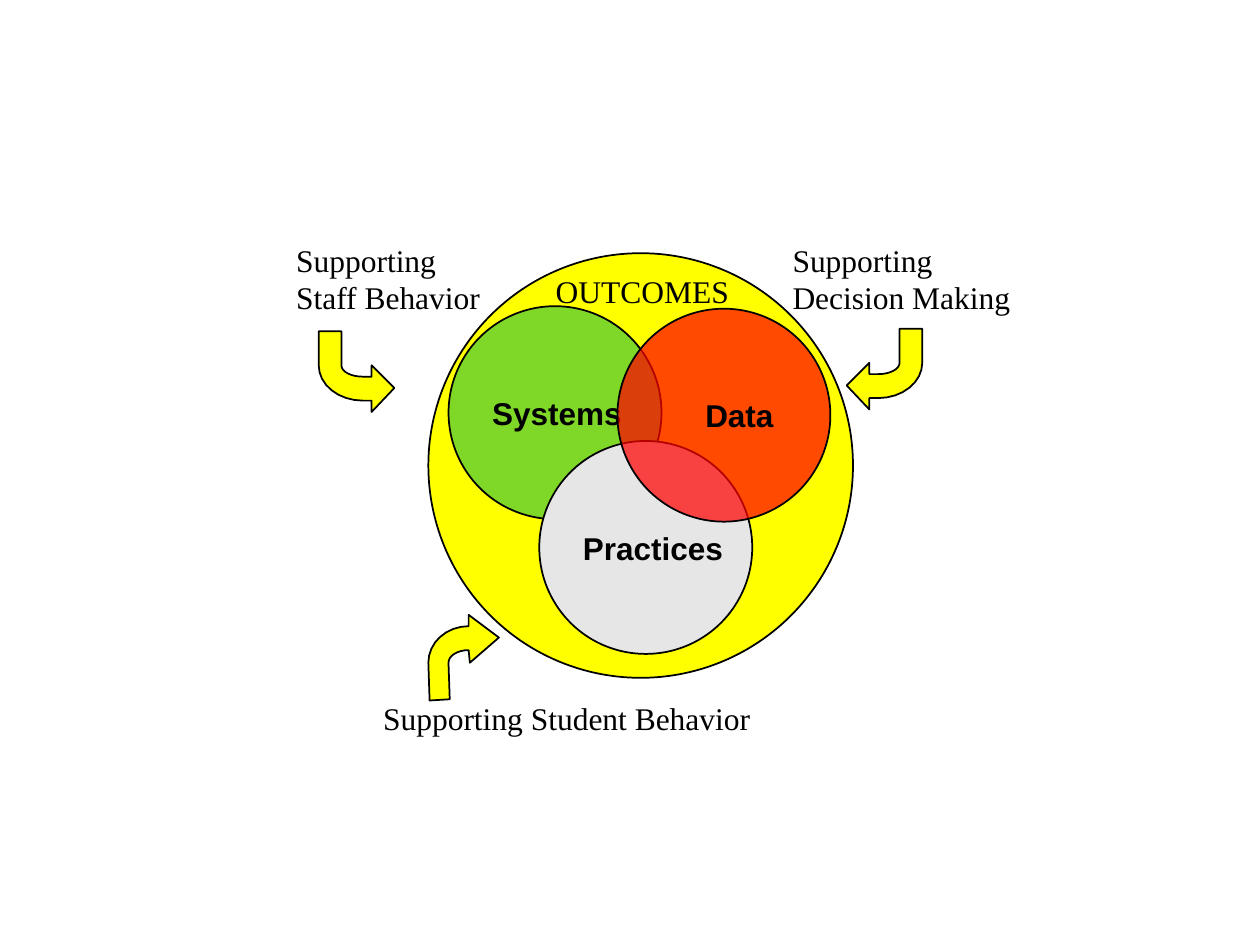
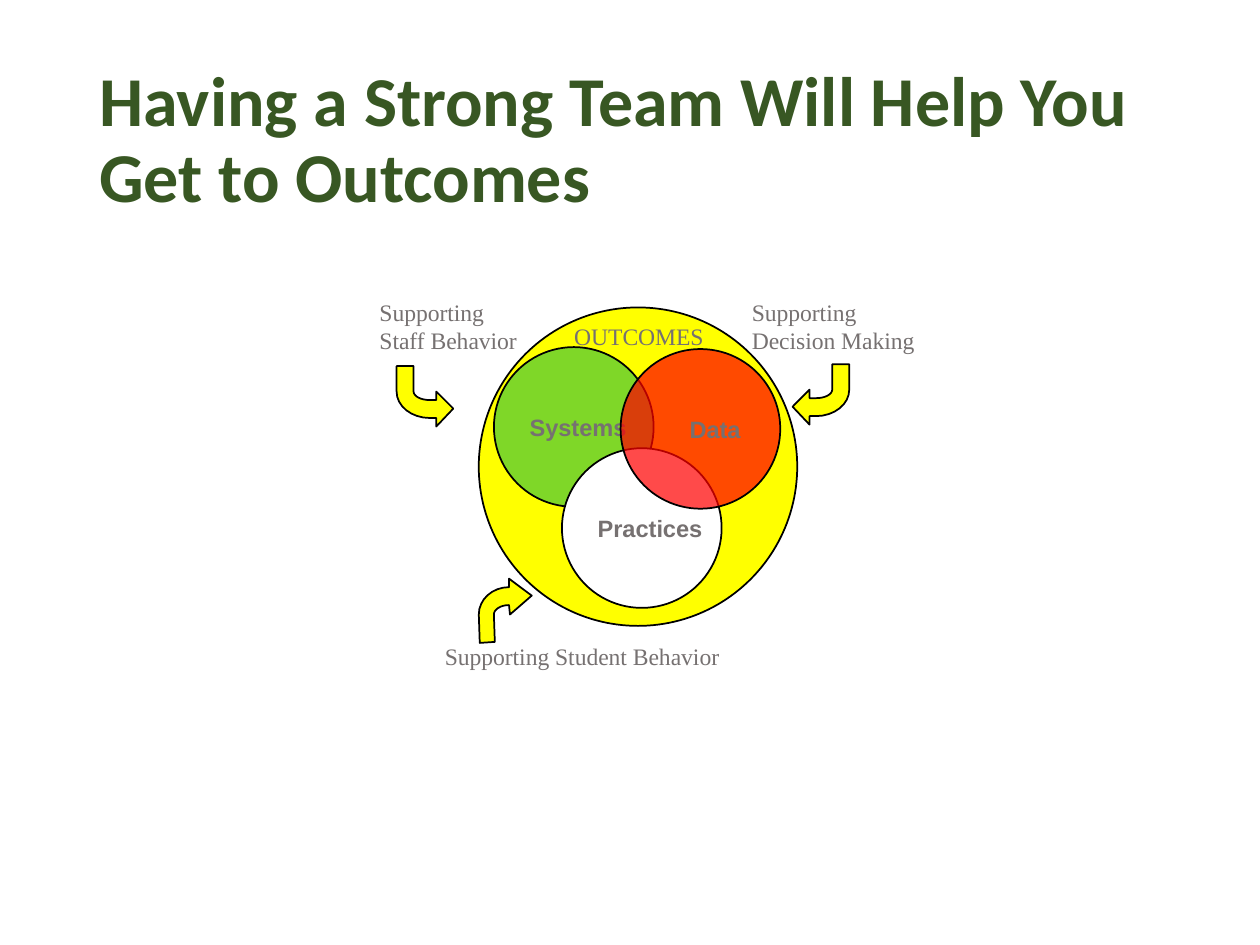
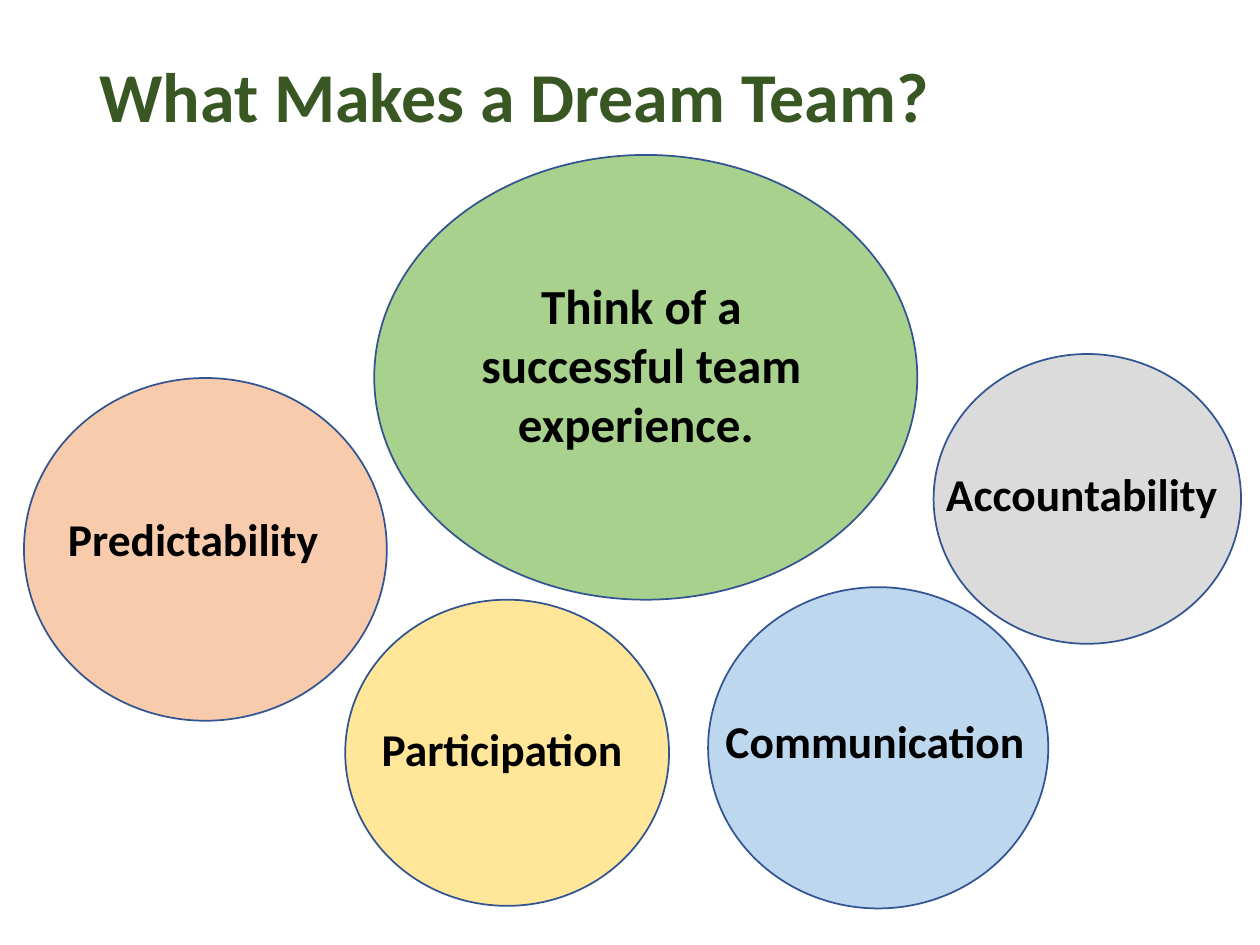
from dataclasses import dataclass
from math import cos, pi, sin

from lxml import etree
from pptx import Presentation
from pptx import util as u
from pptx.dml import color
from pptx.enum import shapes, text as t
from pptx.oxml import ns


@dataclass(frozen=True)
class Theme:
    black: str = "000000"
    gray: str = "767171"
    pale_gray: str = "E7E6E6"
    white: str = "FFFFFF"
    yellow: str = "FFFF00"
    green: str = "00B050"
    red: str = "FF0000"
    title: str = "385723"
    outline: str = "325491"
    peach: str = "F8CBAD"
    leaf: str = "A9D18E"
    cream: str = "FFE699"
    sky: str = "BDD7EE"
    silver: str = "DBDBDB"
    body_font: str = "Calibri"
    diagram_font: str = "Arial"
    label_font: str = "Times New Roman"
    title_size: float = 40
    prompt_size: float = 28
    topic_size: float = 26
    diagram_size: float = 18


THEME = Theme()


def write_text(shape, content, size, font=THEME.body_font, ink=THEME.black, bold=False,
               align=t.PP_ALIGN.LEFT, anchor=t.MSO_ANCHOR.TOP, wrap=True,
               margins=(0.1, 0.05), indent=0, spacing=None):
    frame = shape.text_frame
    frame.word_wrap = wrap
    frame.vertical_anchor = anchor
    side, edge = margins
    frame.margin_left = u.Inches(side + indent)
    frame.margin_right = u.Inches(side)
    frame.margin_top = frame.margin_bottom = u.Inches(edge)
    for index, line in enumerate(content.split("\n")):
        paragraph = frame.add_paragraph() if index else frame.paragraphs[0]
        paragraph.alignment = align
        if spacing:
            paragraph.line_spacing = spacing
        run = paragraph.add_run()
        run.text = line
        run.font.name = font
        run.font.size = u.Pt(size)
        run.font.bold = bold
        run.font.color.rgb = color.RGBColor.from_string(ink)


def quarter_arc(center, radii, start, end, steps=8):
    angles = [start + (end - start) * step / steps for step in range(steps + 1)]
    return [(center[0] + radii[0] * cos(angle), center[1] + radii[1] * sin(angle))
            for angle in angles]


DOWN_ARROW = [(0.6, 0.45), (0.42, 0.64), (0.42, 0.55),
              *quarter_arc((0.35, 0.27), (0.35, 0.28), pi / 2, pi),
              (0, 0), (0.18, 0),
              *quarter_arc((0.35, 0.27), (0.17, 0.09), pi, pi / 2),
              (0.42, 0.36), (0.42, 0.27)]
MIRRORED_ARROW = [(0.6 - x, y) for x, y in DOWN_ARROW]
UP_ARROW = [(0.56, 0.18), (0.32, 0), (0.32, 0.09),
            *quarter_arc((0.32, 0.38), (0.32, 0.29), 1.5 * pi, pi),
            (0.01, 0.68), (0.17, 0.67),
            *quarter_arc((0.32, 0.38), (0.16, 0.1), pi, 1.5 * pi),
            (0.33, 0.38)]


class Deck:
    def __init__(self, theme):
        self.theme = theme
        self.presentation = Presentation()
        self.presentation.slide_width = u.Inches(10)
        self.presentation.slide_height = u.Inches(7.5)
        self.slide = None

    def new_slide(self):
        self.slide = self.presentation.slides.add_slide(self.presentation.slide_layouts[6])

    def paint(self, shape, fill, line, opacity=None):
        shape.shadow.inherit = False
        shape.fill.solid()
        shape.fill.fore_color.rgb = color.RGBColor.from_string(fill)
        if opacity:
            tint = shape.fill._xPr.find(".//" + ns.qn("a:srgbClr"))
            etree.SubElement(tint, ns.qn("a:alpha"), val=str(opacity * 1000))
        shape.line.color.rgb = color.RGBColor.from_string(line)
        shape.line.width = u.Pt(1)

    def ellipse(self, box, fill, line, opacity=None):
        shape = self.slide.shapes.add_shape(shapes.MSO_SHAPE.OVAL, *map(u.Inches, box))
        self.paint(shape, fill, line, opacity)
        return shape

    def label(self, box, content, size, **style):
        shape = self.slide.shapes.add_textbox(*map(u.Inches, box))
        write_text(shape, content, size, **style)

    def arrow(self, points):
        corners = [(u.Inches(x), u.Inches(y)) for x, y in points]
        builder = self.slide.shapes.build_freeform(*corners[0])
        builder.add_line_segments(corners[1:], close=True)
        self.paint(builder.convert_to_shape(), self.theme.yellow, self.theme.black)

    def title(self, content, height):
        self.label((0.69, 0.4, 8.62, height), content, self.theme.title_size,
                   ink=self.theme.title, bold=True, anchor=t.MSO_ANCHOR.MIDDLE, spacing=0.9)

    def outcomes_diagram(self, left, top, scale, ink, practices_fill):
        theme = self.theme
        size = theme.diagram_size * scale

        def place(x, y, width, height):
            return left + x * scale, top + y * scale, width * scale, height * scale

        def circle(x, y, content, fill, opacity=None, indent=0):
            shape = self.ellipse(place(x, y, 1.69, 1.69), fill, theme.black, opacity)
            write_text(shape, content, size, font=theme.diagram_font, ink=ink, bold=True,
                       anchor=t.MSO_ANCHOR.MIDDLE, wrap=False, indent=indent * scale)

        def caption(x, y, width, height, content):
            self.label(place(x, y, width, height), content, size, font=theme.label_font,
                       ink=ink, margins=(0.07 * scale, 0.04 * scale))

        def arrow(x, y, outline):
            self.arrow([place(x + dx, y + dy, 0, 0)[:2] for dx, dy in outline])

        self.ellipse(place(0, 0, 3.37, 3.37), theme.yellow, theme.black)
        circle(0.16, 0.42, "Systems", theme.green, opacity=50)
        caption(-1.12, -0.14, 1.75, 0.6, "Supporting\nStaff Behavior")
        arrow(-0.87, 0.62, DOWN_ARROW)
        circle(0.88, 1.49, "Practices", practices_fill)
        caption(-0.43, 3.5, 3.25, 0.42, "Supporting Student Behavior")
        arrow(0, 2.87, UP_ARROW)
        caption(0.94, 0.11, 1.65, 0.34, "OUTCOMES")
        circle(1.5, 0.44, "Data", theme.red, opacity=71, indent=0.35)
        caption(2.82, -0.14, 2, 0.6, "Supporting\nDecision Making")
        arrow(3.32, 0.6, MIRRORED_ARROW)

    def topic(self, circle, label, content, fill, size=THEME.topic_size,
              align=t.PP_ALIGN.LEFT):
        self.ellipse(circle, fill, self.theme.outline)
        self.label((*label, 2.9, 0.54), content, size, bold=True, align=align)


def main():
    deck = Deck(THEME)

    deck.new_slide()
    deck.outcomes_diagram(3.4, 2.01, 1, THEME.black, THEME.pale_gray)

    deck.new_slide()
    deck.outcomes_diagram(3.8, 2.44, 0.75, THEME.gray, THEME.white)
    deck.title("Having a Strong Team Will Help You Get to Outcomes", 1.45)

    deck.new_slide()
    deck.title("What Makes a Dream Team?", 0.79)
    deck.topic((0.19, 3, 2.88, 2.72), (0.44, 4.01), "Predictability", THEME.peach)
    deck.topic((2.97, 1.23, 4.31, 3.53), (3.64, 2.14),
               "Think of a successful team experience. ", THEME.leaf,
               size=THEME.prompt_size, align=t.PP_ALIGN.CENTER)
    deck.topic((2.74, 4.76, 2.57, 2.43), (2.93, 5.67), "Participation", THEME.cream)
    deck.topic((5.62, 4.66, 2.7, 2.55), (5.66, 5.61), "Communication", THEME.sky)
    deck.topic((7.41, 2.81, 2.44, 2.3), (7.41, 3.65), "Accountability", THEME.silver)

    deck.presentation.save("out.pptx")


if __name__ == "__main__":
    main()
